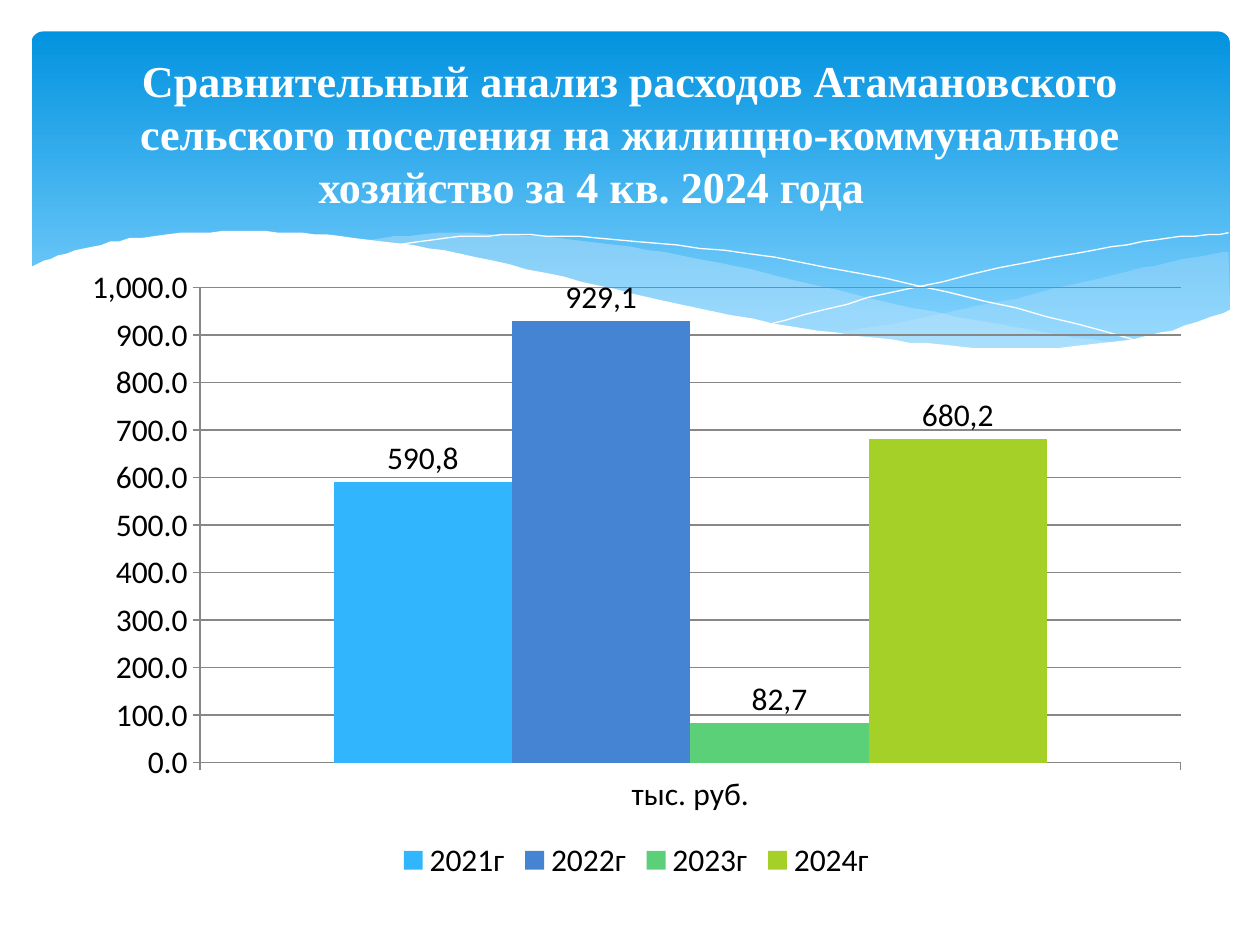
from lxml import etree
from pptx import Presentation
from pptx import util as u
from pptx.chart import data as chart_data
from pptx.dml.color import RGBColor
from pptx.enum import chart as charts, shapes, text
from pptx.oxml import ns

Pt = u.Pt
WHITE = RGBColor(0xFF, 0xFF, 0xFF)
BLACK = RGBColor(0, 0, 0)
GREY = RGBColor(0x87, 0x87, 0x87)
BANNER_TOP = RGBColor(0x02, 0x93, 0xE0)
BANNER_BOTTOM = RGBColor(0x83, 0xD3, 0xFE)
PALE_BLUE = RGBColor(0xC6, 0xE7, 0xFC)

# Wave knots, in points
RIGHT_WAVE = [(702, 144), (682.6, 146.9), (652.3, 153.4), (619.9, 160.6), (579.6, 170.6),
              (524.9, 182.2), (475.9, 190.8)]
RIGHT_WAVE_BASE = [(475.9, 190.8), (507.6, 195.1), (545, 198.7), (578.2, 200.2),
                   (614.9, 198.7), (645.8, 194.4), (673.2, 188.6), (702.7, 177.8)]
LONG_WAVE = [(643, 196.6), (602.6, 190.8), (558, 182.9), (508.3, 172.8), (452.9, 159.8),
             (409.7, 149.8), (370.1, 142.6), (334.8, 137.5), (302.4, 134.6), (259.9, 133.2),
             (225.4, 135.4), (205.9, 137.5)]
LONG_WAVE_BASE = [(205.9, 137.5), (246.2, 143.3), (290.9, 151.9), (323.3, 159.8),
                  (381.6, 172.8), (432.7, 183.6), (478.8, 191.5), (519.8, 197.3),
                  (556.6, 199.4), (589, 200.2), (617, 199.4), (643, 196.6)]
FALLING_LINE = [(222.5, 140.4), (247.7, 136.8), (278.6, 134.6), (311.8, 134.6), (352.1, 136.8),
                (400.3, 141.8), (457.9, 149.8), (523.4, 162.7), (598.3, 180.7), (653, 195.8)]
RISING_LINE = [(441.4, 185), (483.8, 173.5), (538.6, 160.6), (601.9, 146.9), (644.4, 139.7),
               (675.4, 135.4), (702, 133.2)]
WHITE_WAVE = [(703.4, 177.1), (676.8, 186.5), (647.3, 193.7), (612, 198), (582.5, 199.4),
              (547.9, 198), (509.8, 194.4), (466.6, 188.6), (416.9, 180), (362.2, 167.8),
              (321.8, 158.4), (281.5, 149), (244.8, 141.8), (210.2, 136.8), (180, 133.9),
              (151.9, 132.5), (127.4, 132.5), (95, 133.9), (68.4, 137.5), (48.2, 141.8),
              (28.8, 147.6), (16.6, 153.4)]
WHITE_BASE = [(16.6, 236.9), (703.4, 236.9)]

EXPENSES = [("2021г", 590.8, RGBColor(0x31, 0xB6, 0xFD)),
            ("2022г", 929.1, RGBColor(0x45, 0x84, 0xD3)),
            ("2023г", 82.7, RGBColor(0x5B, 0xD0, 0x78)),
            ("2024г", 680.2, RGBColor(0xA5, 0xD0, 0x28))]


def smooth(knots, steps=4):
    """Points of a Catmull-Rom curve through the knots."""
    padded = [knots[0], *knots, knots[-1]]
    points = []
    for a, b, c, d in zip(padded, padded[1:], padded[2:], padded[3:]):
        for step in range(steps):
            t = step / steps
            points.append(tuple(
                q + t * ((r - p) + t * ((2 * p - 5 * q + 4 * r - s)
                                        + t * (3 * q - p - 3 * r + s))) / 2
                for p, q, r, s in zip(a, b, c, d)))
    return points + [knots[-1]]


class SlideBuilder:
    title_font, title_size = "Times New Roman", Pt(25.2)
    chart_font, chart_size = "Calibri", Pt(18)

    def __init__(self, slide):
        self.slide = slide

    def banner(self, left, top, width, height):
        shape = self.slide.shapes.add_shape(
            shapes.MSO_SHAPE.ROUNDED_RECTANGLE, Pt(left), Pt(top), Pt(width), Pt(height))
        shape.adjustments[0] = 0.034
        shape.shadow.inherit = False
        shape.line.fill.background()
        shape.fill.gradient()
        shape.fill.gradient_angle = 270
        for stop, color, position in zip(shape.fill.gradient_stops,
                                         (BANNER_TOP, BANNER_BOTTOM), (0, 0.9)):
            stop.color.rgb, stop.position = color, position

    def outline(self, points, closed):
        builder = self.slide.shapes.build_freeform(*points[0], scale=Pt(1))
        builder.add_line_segments(points[1:], close=closed)
        shape = builder.convert_to_shape()
        shape.shadow.inherit = False
        return shape

    def wave(self, points, color, opacity=100):
        shape = self.outline(points, True)
        shape.line.fill.background()
        shape.fill.solid()
        shape.fill.fore_color.rgb = color
        if opacity < 100:
            solid = shape.fill._xPr.find(ns.qn("a:solidFill"))
            etree.SubElement(solid[0], ns.qn("a:alpha"), val=str(opacity * 1000))

    def curve(self, knots):
        shape = self.outline(smooth(knots), False)
        shape.fill.background()
        shape.line.color.rgb = WHITE
        shape.line.width = Pt(0)

    def style_font(self, font, name, size, color, bold=False):
        font.name, font.size, font.bold = name, size, bold
        font.color.rgb = color

    def title(self, left, top, width, height, lines):
        shape = self.slide.shapes.add_textbox(Pt(left), Pt(top), Pt(width), Pt(height))
        frame = shape.text_frame
        frame.word_wrap = True
        frame.vertical_anchor = text.MSO_ANCHOR.MIDDLE
        for index, (words, right_indent) in enumerate(lines):
            paragraph = frame.add_paragraph() if index else frame.paragraphs[0]
            paragraph.alignment = text.PP_ALIGN.CENTER
            paragraph._p.get_or_add_pPr().set("marR", str(Pt(right_indent)))
            run = paragraph.add_run()
            run.text = words
            self.style_font(run.font, self.title_font, self.title_size, WHITE, True)

    def column_chart(self, left, top, width, height, category, rows):
        data = chart_data.CategoryChartData(number_format="#,##0.0")
        data.categories = [category]
        for name, value, _ in rows:
            data.add_series(name, [value])
        chart = self.slide.shapes.add_chart(
            charts.XL_CHART_TYPE.COLUMN_CLUSTERED,
            Pt(left), Pt(top), Pt(width), Pt(height), data).chart
        self.style_font(chart.font, self.chart_font, self.chart_size, BLACK)
        chart.has_title = False
        chart.has_legend = True
        chart.legend.position = charts.XL_LEGEND_POSITION.BOTTOM
        chart.legend.include_in_layout = False

        # Axes
        for axis in (chart.category_axis, chart.value_axis):
            axis.major_tick_mark = charts.XL_TICK_MARK.OUTSIDE
            axis.format.line.color.rgb = GREY
        chart.value_axis.has_major_gridlines = True
        chart.value_axis.major_gridlines.format.line.color.rgb = GREY
        chart.value_axis.tick_labels.number_format = "#,##0.0"
        chart.value_axis.tick_labels.number_format_is_linked = False

        # Columns and their labels
        plot = chart.plots[0]
        plot.gap_width, plot.overlap, plot.vary_by_categories = 150, 0, False
        for series, (_, value, color) in zip(plot.series, rows):
            series.format.fill.solid()
            series.format.fill.fore_color.rgb = color
            series.data_labels.show_value = True
            series.data_labels.number_format = "#,##0.0"
            series.data_labels.number_format_is_linked = False
            label = series.points[0].data_label
            run = label.text_frame.paragraphs[0].add_run()
            run.text = str(value).replace(".", ",")
            self.style_font(run.font, self.chart_font, self.chart_size, BLACK)
            label.position = charts.XL_LABEL_POSITION.OUTSIDE_END


def main():
    presentation = Presentation()
    presentation.slide_width, presentation.slide_height = Pt(720), Pt(540)
    builder = SlideBuilder(presentation.slides.add_slide(presentation.slide_layouts[6]))

    # Banner with waves
    builder.banner(18, 18, 684.72, 194.4)
    builder.wave(smooth(RIGHT_WAVE) + smooth(RIGHT_WAVE_BASE), PALE_BLUE, 29)
    builder.wave(smooth(LONG_WAVE) + smooth(LONG_WAVE_BASE), PALE_BLUE, 40)
    builder.curve(FALLING_LINE)
    builder.curve(RISING_LINE)
    builder.wave(smooth(WHITE_WAVE) + WHITE_BASE, WHITE)

    # Expenses by year
    builder.column_chart(39.6, 146.16, 648, 360, "тыс. руб.", EXPENSES)

    # Title
    builder.title(36, 26.64, 648, 98.64, [
        ("Сравнительный анализ расходов Атамановского "
         "сельского поселения на жилищно-коммунальное", 0),
        ("хозяйство за 4 кв. 2024 года", 44)])
    presentation.save("out.pptx")


if __name__ == "__main__":
    main()
